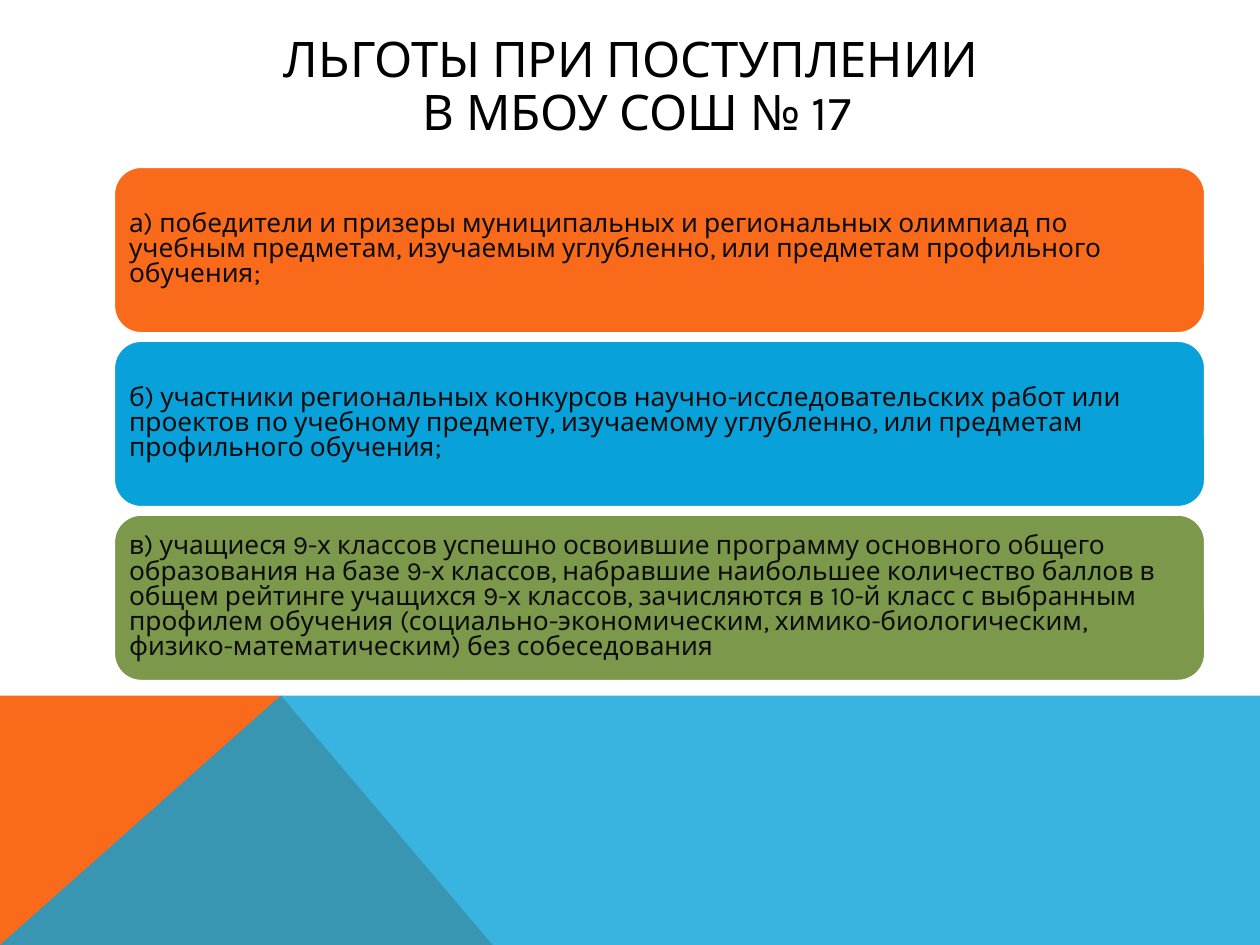
from pptx import Presentation
from pptx.dml.color import RGBColor
from pptx.enum.shapes import MSO_SHAPE
from pptx.enum.text import MSO_ANCHOR, PP_ALIGN
from pptx.oxml.ns import qn
from pptx.util import Inches, Pt
from lxml.etree import SubElement

ORANGE, BLUE, GREEN = "F96A1B", "08A1D9", "7C984A"
BENEFITS = [
    (ORANGE, "а) победители и призеры муниципальных и региональных олимпиад по "
             "учебным предметам, изучаемым углубленно, или предметам профильного обучения;"),
    (BLUE, "б) участники региональных конкурсов научно-исследовательских работ или "
           "проектов по учебному предмету, изучаемому углубленно, или предметам "
           "профильного обучения;"),
    (GREEN, "в) учащиеся 9-х классов успешно освоившие программу основного общего "
            "образования на базе 9-х классов, набравшие наибольшее количество баллов в "
            "общем рейтинге учащихся 9-х классов, зачисляются в 10-й класс с выбранным "
            "профилем обучения (социально-экономическим, химико-биологическим, "
            "физико-математическим) без собеседования"),
]


def rgb(value):
    return RGBColor.from_string(value)


def write(tf, text, font="Karla", size=15, color="0D0D0D", align=PP_ALIGN.LEFT, spacing=0.8):
    tf.word_wrap = True
    tf.vertical_anchor = MSO_ANCHOR.MIDDLE
    p = tf.paragraphs[0]
    p.alignment = align
    p.line_spacing = spacing
    for i, line in enumerate(text.split("\n")):
        if i:
            p.add_line_break()
        r = p.add_run()
        r.text = line
        r.font.name = font
        r.font.size = Pt(size)
        r.font.color.rgb = rgb(color)


class SlideBuilder:
    def __init__(self, slide, font="Karla"):
        self.slide = slide
        self.font = font

    def polygon(self, points, color, alpha=None):
        start, *rest = [(Inches(x), Inches(y)) for x, y in points]
        builder = self.slide.shapes.build_freeform(*start)
        builder.add_line_segments(rest)
        sp = builder.convert_to_shape()
        sp.shadow.inherit = False
        sp.fill.solid()
        sp.fill.fore_color.rgb = rgb(color)
        sp.line.fill.background()
        if alpha is not None:
            clr = next(sp.element.spPr.iter(qn("a:srgbClr")))
            SubElement(clr, qn("a:alpha")).set("val", str(alpha * 1000))

    def title(self, text, x, y, w, h):
        sp = self.slide.shapes.add_textbox(Inches(x), Inches(y), Inches(w), Inches(h))
        write(sp.text_frame, text, font=self.font, size=28, color="000000",
              align=PP_ALIGN.CENTER, spacing=0.9)

    def card(self, text, color, x, y, w, h):
        sp = self.slide.shapes.add_shape(
            MSO_SHAPE.ROUNDED_RECTANGLE, Inches(x), Inches(y), Inches(w), Inches(h))
        sp.shadow.inherit = False
        sp.fill.solid()
        sp.fill.fore_color.rgb = rgb(color)
        sp.line.color.rgb = rgb("FFFFFF")
        sp.line.width = Pt(2)
        tf = sp.text_frame
        tf.margin_left = tf.margin_right = tf.margin_top = tf.margin_bottom = Inches(0.06)
        write(tf, text, font=self.font)


def main():
    prs = Presentation()
    prs.slide_width, prs.slide_height = Inches(10), Inches(7.5)
    s = SlideBuilder(prs.slides.add_slide(prs.slide_layouts[6]))
    top, peak, bottom = 5.52, 2.23, 7.5
    s.polygon([(0, bottom), (0, top), (peak, top), (3.91, bottom)], ORANGE)
    s.polygon([(0, bottom), (peak, top), (10, top), (10, bottom)], BLUE, alpha=80)
    s.title("ЛЬГОТЫ ПРИ ПОСТУПЛЕНИИ\n В МБОУ СОШ № 17", 0.9, 0.4, 8.22, 0.6)
    for i, (color, text) in enumerate(BENEFITS):
        s.card(text, color, 0.9, 1.32 + 1.38 * i, 8.67, 1.33)
    prs.save("out.pptx")


if __name__ == "__main__":
    main()
